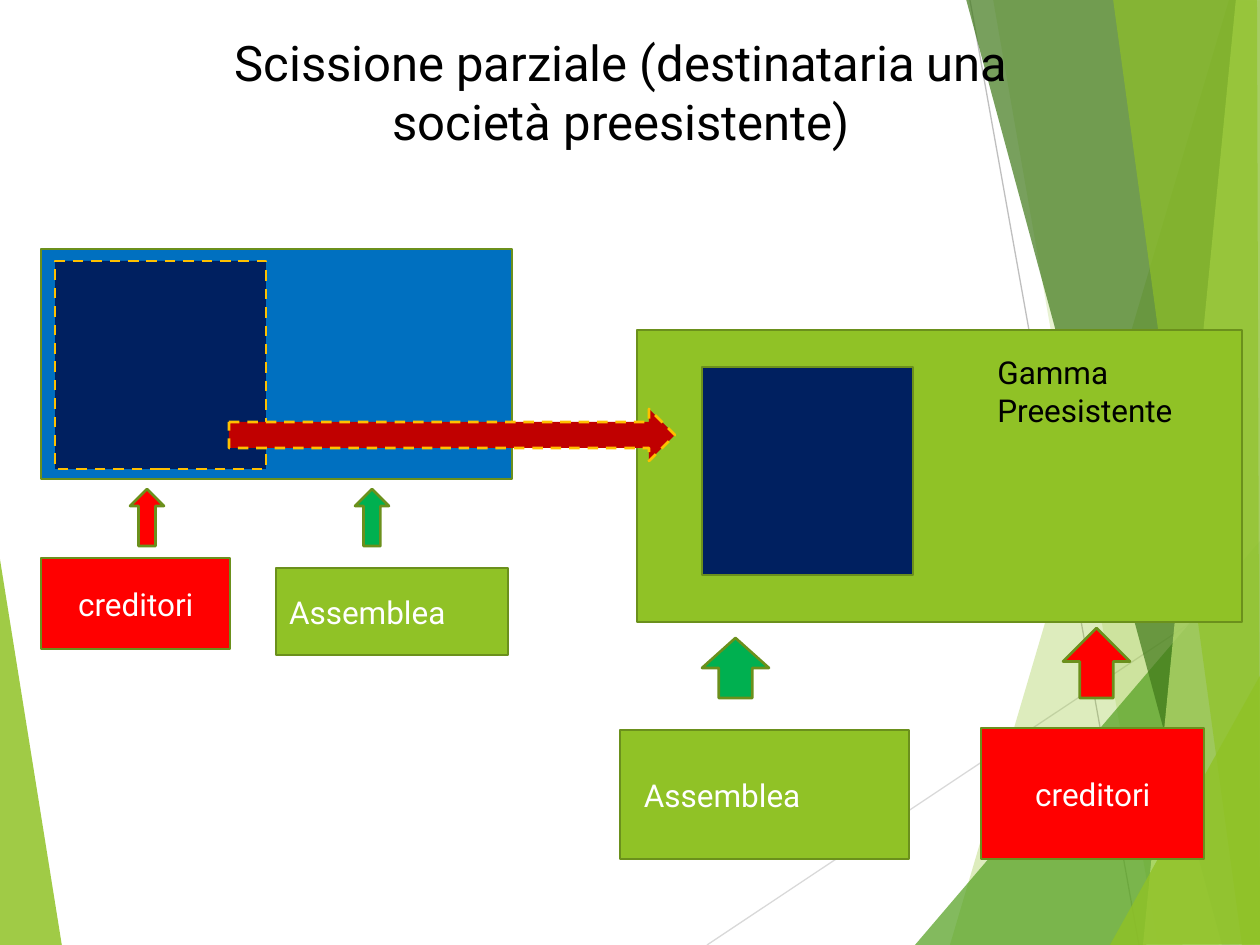
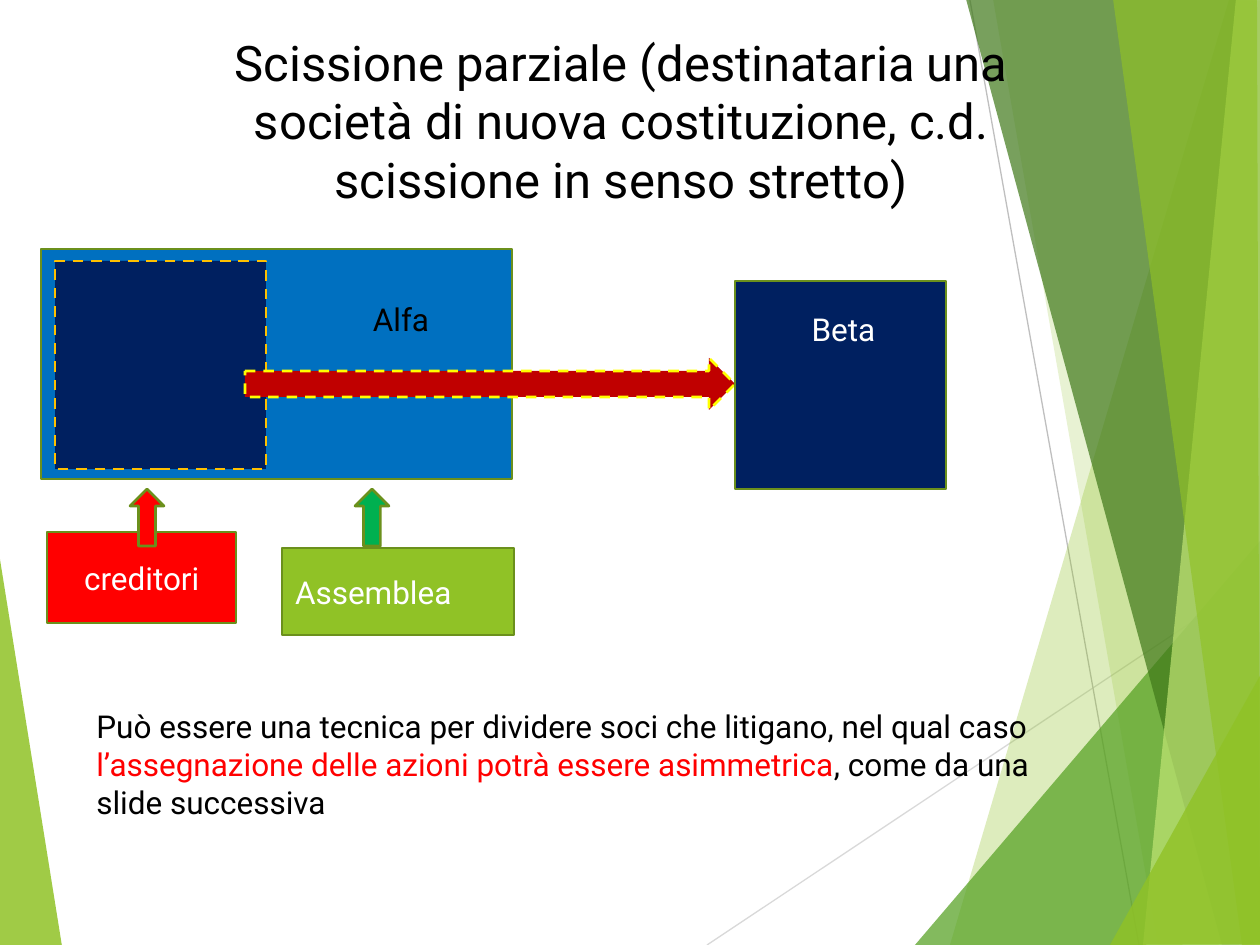
from dataclasses import dataclass

from lxml import etree
from pptx import Presentation
from pptx.dml.color import RGBColor
from pptx.enum.dml import MSO_LINE
from pptx.enum.shapes import MSO_CONNECTOR, MSO_SHAPE
from pptx.enum.text import MSO_ANCHOR, PP_ALIGN
from pptx.oxml.ns import qn
from pptx.util import Emu, Pt

PX = 914400 / 126
SLIDE_WIDTH, SLIDE_HEIGHT = 1260, 945
BLANK_LAYOUT = 6
FONT = "Roboto"
TITLE_SIZE, BODY_SIZE = 28, 18
INSET = 13

RECTANGLE = MSO_SHAPE.RECTANGLE
UP_ARROW = MSO_SHAPE.UP_ARROW
RIGHT_ARROW = MSO_SHAPE.RIGHT_ARROW
STRAIGHT = MSO_CONNECTOR.STRAIGHT
DASH = MSO_LINE.DASH
MIDDLE = MSO_ANCHOR.MIDDLE
LEFT, CENTER = PP_ALIGN.LEFT, PP_ALIGN.CENTER

BLACK = RGBColor(0x00, 0x00, 0x00)
WHITE = RGBColor(0xFF, 0xFF, 0xFF)
RED = RGBColor(0xFF, 0x00, 0x00)
DARK_RED = RGBColor(0xC0, 0x00, 0x00)
GREEN = RGBColor(0x00, 0xB0, 0x50)
BLUE = RGBColor(0x00, 0x70, 0xC0)
NAVY = RGBColor(0x00, 0x20, 0x60)
AMBER = RGBColor(0xFF, 0xC0, 0x00)
YELLOW = RGBColor(0xFF, 0xFF, 0x00)
LIME = RGBColor(0x90, 0xC2, 0x26)
LIME_OUTLINE = RGBColor(0x6B, 0x90, 0x1C)
LEAF = RGBColor(0x54, 0xA0, 0x21)
FOREST = RGBColor(0x3F, 0x78, 0x19)
PALE_LIME = RGBColor(0xC0, 0xE4, 0x74)
LIGHT_GREY = RGBColor(0xD9, 0xD9, 0xD9)
GREY = RGBColor(0xBF, 0xBF, 0xBF)


@dataclass(frozen=True)
class Band:
    points: tuple[tuple[int, int], ...]
    color: RGBColor
    opacity: int


@dataclass(frozen=True)
class Ray:
    start: tuple[int, int]
    end: tuple[int, int]
    color: RGBColor


@dataclass(frozen=True)
class Block:
    left: int
    top: int
    width: int
    height: int
    fill: RGBColor
    kind: MSO_SHAPE = RECTANGLE
    outline: RGBColor = LIME_OUTLINE
    text: str = ""
    align: PP_ALIGN = CENTER
    inset: int = INSET

    @property
    def dashed(self) -> bool:
        return self.outline != LIME_OUTLINE


@dataclass(frozen=True)
class Label:
    left: int
    top: int
    width: int
    height: int
    runs: tuple[tuple[str, RGBColor], ...]
    align: PP_ALIGN = CENTER
    size: int = BODY_SIZE


LEFT_BAND = Band(((-1, 553), (62, 946), (-1, 945)), LIME, 85)
RAYS = (
    Ray((707, 945), (1261, 576), LIGHT_GREY),
    Ray((970, 0), (1139, 945), GREY),
)
RIGHT_BANDS = (
    Band(((1229, 0), (950, 945), (1262, 946), (1261, 1)), LIME, 30),
    Band(((993, -1), (1158, 945), (1261, 945), (1261, -1)), LIME, 20),
    Band(((915, 945), (1260, 541), (1261, 945)), LEAF, 72),
    Band(((966, -1), (1222, 945), (1261, 944), (1261, -1)), FOREST, 70),
    Band(((1236, -1), (1143, 945), (1261, 945), (1260, -1)), PALE_LIME, 70),
    Band(((1113, -1), (1242, 945), (1260, 945), (1257, -1)), LIME, 65),
    Band(((1110, 945), (1261, 674), (1261, 944)), LIME, 80),
)


def creditors(left: int, top: int, width: int = 189, height: int = 91) -> Block:
    return Block(left, top, width, height, RED, text="creditori")


def assembly(left: int, top: int, width: int = 232, height: int = 87,
             inset: int = INSET) -> Block:
    return Block(left, top, width, height, LIME, text="Assemblea",
                 align=LEFT, inset=inset)


def assigned_assets(left: int, top: int, outline: RGBColor = LIME_OUTLINE) -> Block:
    return Block(left, top, 211, 208, NAVY, outline=outline)


def transfer_arrow(left: int, top: int, width: int, outline: RGBColor) -> Block:
    return Block(left, top, width, 52, DARK_RED, RIGHT_ARROW, outline)


def title(text: str, height: int) -> Label:
    return Label(194, 26, 854, height, ((text, BLACK),), size=TITLE_SIZE)


ALFA_COMPANY = (
    Block(41, 249, 471, 230, BLUE),
    assigned_assets(55, 261, AMBER),
)
ALFA_ARROWS = (
    Block(355, 489, 34, 57, GREEN, UP_ARROW),
    Block(130, 489, 34, 57, RED, UP_ARROW),
)

EXISTING_COMPANY = (
    *ALFA_COMPANY,
    assembly(276, 568),
    assembly(620, 730, 289, 129, inset=24),
    Block(702, 638, 67, 60, GREEN, UP_ARROW),
    creditors(41, 558),
    creditors(981, 728, 223, 131),
    title("Scissione parziale (destinataria una società preesistente)", 131),
    *ALFA_ARROWS,
    Block(637, 330, 605, 292, LIME),
    Label(985, 347, 228, 89, (("Gamma Preesistente", BLACK),), LEFT),
    Block(1063, 628, 67, 70, RED, UP_ARROW),
    transfer_arrow(229, 409, 446, AMBER),
    assigned_assets(702, 367),
)

NEW_COMPANY = (
    *ALFA_COMPANY,
    assembly(282, 548),
    creditors(47, 532),
    title("Scissione parziale (destinataria una società di nuova costituzione, "
          "c.d. scissione in senso stretto)", 190),
    *ALFA_ARROWS,
    transfer_arrow(245, 358, 490, YELLOW),
    assigned_assets(735, 281),
    Label(84, 701, 983, 127, (
        ("Può essere una tecnica per dividere soci che litigano, nel qual caso ", BLACK),
        ("l’assegnazione delle azioni potrà essere asimmetrica", RED),
        (", come da una slide successiva", BLACK),
    ), LEFT),
    Label(312, 294, 178, 50, (("Alfa", BLACK),)),
    Label(769, 304, 149, 50, (("Beta", WHITE),)),
)


def px(length: int) -> Emu:
    return Emu(round(length * PX))


def draw_band(slide, band: Band) -> None:
    builder = slide.shapes.build_freeform(*band.points[0], scale=PX)
    builder.add_line_segments(band.points[1:], close=True)
    shape = builder.convert_to_shape()
    shape.shadow.inherit = False
    shape.line.fill.background()
    shape.fill.solid()
    shape.fill.fore_color.rgb = band.color
    color = shape.fill._xPr.find(f"{qn('a:solidFill')}/{qn('a:srgbClr')}")
    etree.SubElement(color, qn("a:alpha"), val=str(band.opacity * 1000))


def draw_ray(slide, ray: Ray) -> None:
    line = slide.shapes.add_connector(
        STRAIGHT, *(px(value) for value in ray.start + ray.end))
    line.line.color.rgb = ray.color
    line.line.width = Pt(0.75)
    etree.SubElement(line._element.spPr, qn("a:effectLst"))


def draw_backdrop(slide) -> None:
    draw_band(slide, LEFT_BAND)
    for ray in RAYS:
        draw_ray(slide, ray)
    for band in RIGHT_BANDS:
        draw_band(slide, band)


def write_runs(paragraph, runs: tuple[tuple[str, RGBColor], ...],
               align: PP_ALIGN, size: int) -> None:
    paragraph.alignment = align
    paragraph.font.name = FONT
    paragraph.font.size = Pt(size)
    for text, color in runs:
        run = paragraph.add_run()
        run.text = text
        run.font.color.rgb = color


def draw_block(slide, block: Block) -> None:
    shape = slide.shapes.add_shape(
        block.kind, px(block.left), px(block.top), px(block.width), px(block.height))
    shape.shadow.inherit = False
    shape.fill.solid()
    shape.fill.fore_color.rgb = block.fill
    shape.line.color.rgb = block.outline
    shape.line.width = Pt(1.5)
    if block.dashed:
        shape.line.dash_style = DASH
    if block.text:
        frame = shape.text_frame
        frame.vertical_anchor = MIDDLE
        frame.margin_left = px(block.inset)
        write_runs(frame.paragraphs[0], ((block.text, WHITE),), block.align, BODY_SIZE)


def draw_label(slide, label: Label) -> None:
    box = slide.shapes.add_textbox(
        px(label.left), px(label.top), px(label.width), px(label.height))
    box.text_frame.word_wrap = True
    write_runs(box.text_frame.paragraphs[0], label.runs, label.align, label.size)


def add_slide(presentation, items: tuple[Block | Label, ...]) -> None:
    slide = presentation.slides.add_slide(presentation.slide_layouts[BLANK_LAYOUT])
    draw_backdrop(slide)
    for item in items:
        if isinstance(item, Block):
            draw_block(slide, item)
        else:
            draw_label(slide, item)


def main() -> None:
    presentation = Presentation()
    presentation.slide_width = px(SLIDE_WIDTH)
    presentation.slide_height = px(SLIDE_HEIGHT)
    for items in (EXISTING_COMPANY, NEW_COMPANY):
        add_slide(presentation, items)
    presentation.save("out.pptx")


if __name__ == "__main__":
    main()
